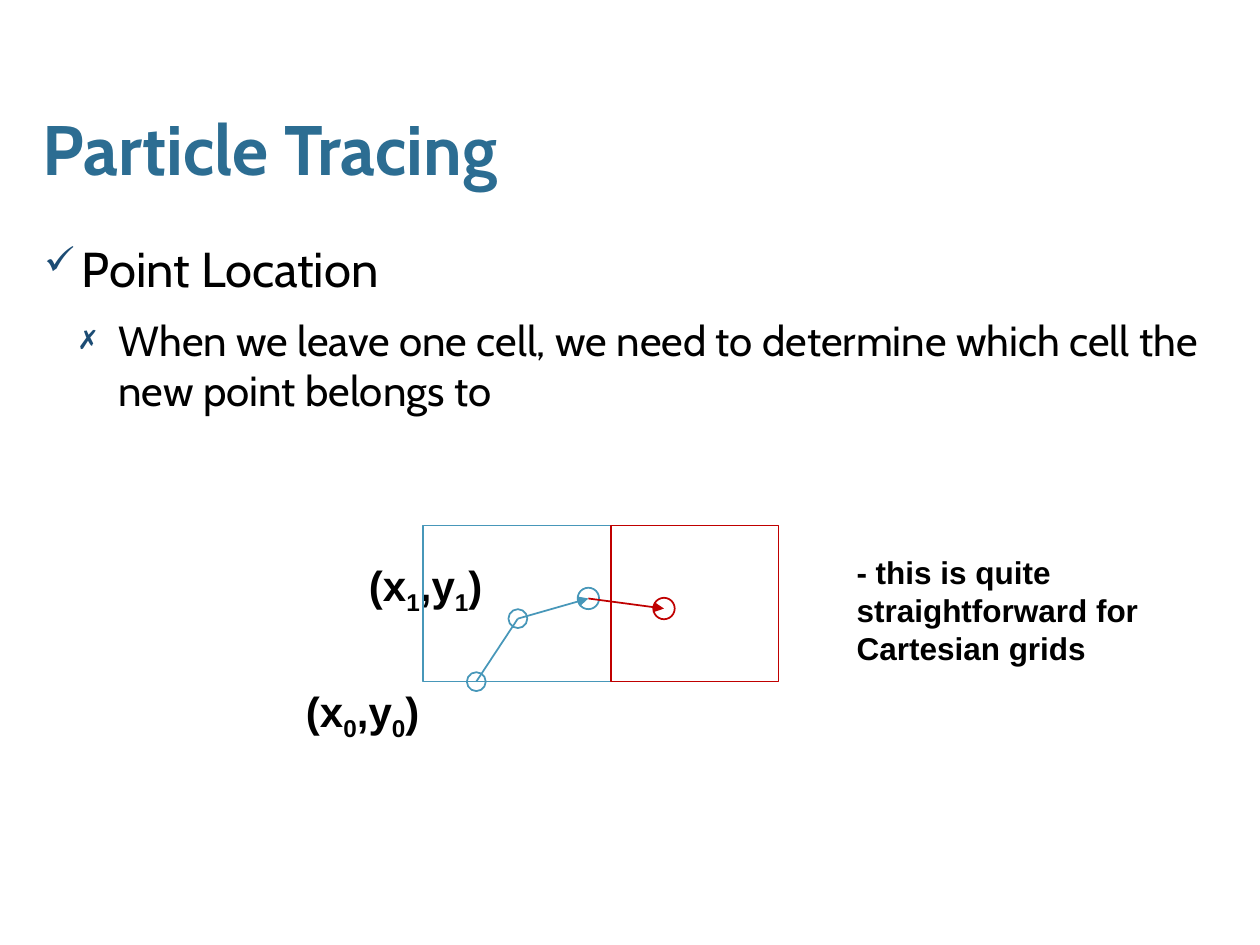
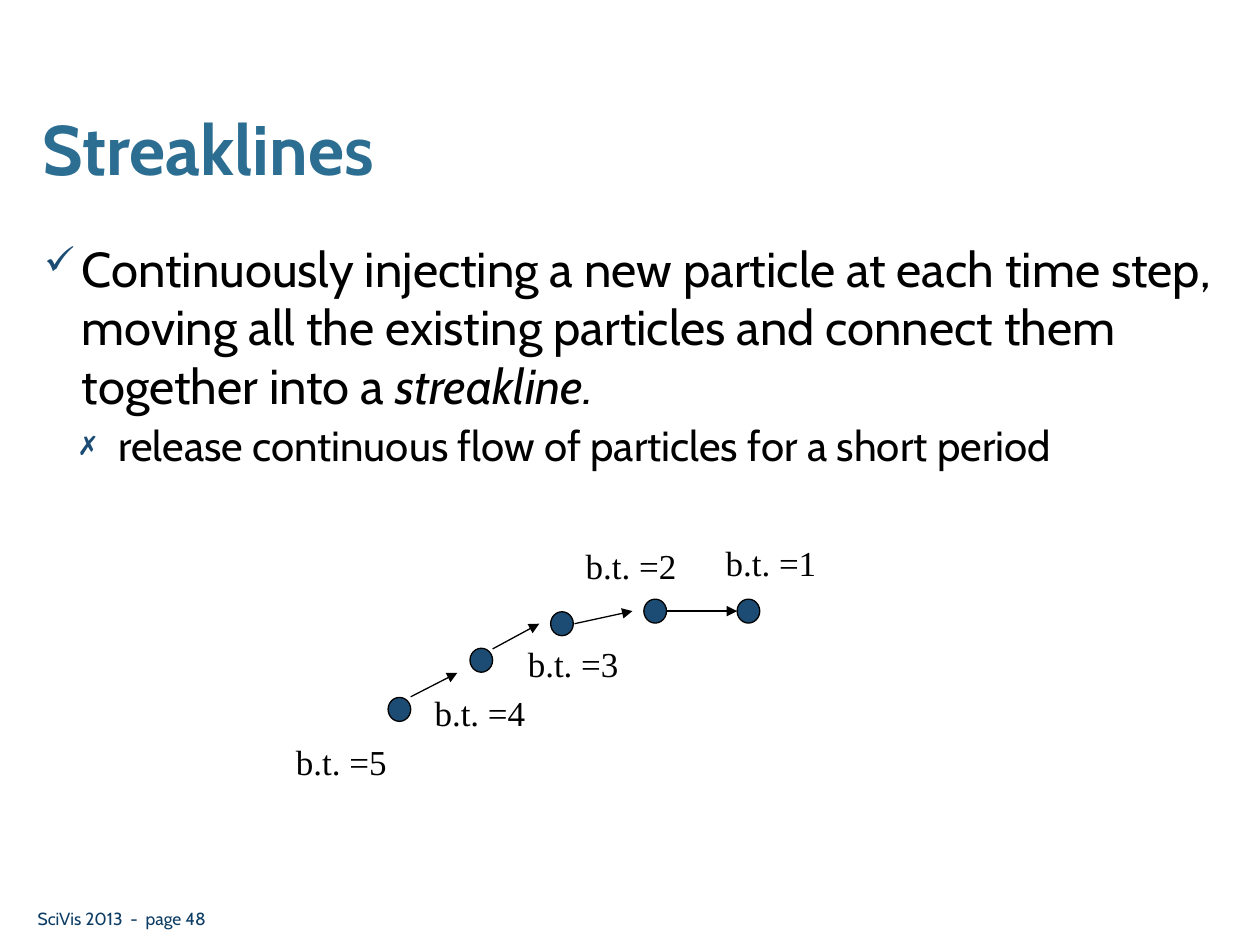
from itertools import pairwise

from lxml import etree
from pptx import Presentation
from pptx import util as u
from pptx.dml.color import RGBColor
from pptx.enum import shapes, text
from pptx.oxml import ns

TITLE_BLUE = RGBColor(0x2C, 0x6D, 0x92)
NAVY = RGBColor(0x1C, 0x4C, 0x74)
FOOTER_BLUE = RGBColor(0x0D, 0x3D, 0x65)
CELL_BLUE = RGBColor(0x47, 0x97, 0xB9)
CELL_RED = RGBColor(0xC0, 0x00, 0x00)
BLACK = RGBColor(0x00, 0x00, 0x00)
TITLE_ONLY = 5


def inches(*lengths):
    return [u.Inches(length) for length in lengths]


def add_xml(parent, tag, **attributes):
    return etree.SubElement(parent, ns.qn(tag), attributes)


class Deck:
    font = "Cabin"
    bullets = [("✓", 0.3, 28), ("✗", 0.59, 24)]
    hanging = 0.3

    def __init__(self):
        self.presentation = Presentation()
        self.presentation.slide_width, self.presentation.slide_height = inches(10, 7.5)
        self.slide = None

    def add_slide(self, title):
        layout = self.presentation.slide_layouts[TITLE_ONLY]
        self.slide = self.presentation.slides.add_slide(layout)
        shape = self.slide.shapes.title
        shape.left, shape.top, shape.width, shape.height = inches(0.34, 0.84, 9.31, 0.73)
        frame = self.format_frame(shape, side_inset=0)
        frame.vertical_anchor = text.MSO_ANCHOR.MIDDLE
        paragraph = frame.paragraphs[0]
        paragraph.alignment = text.PP_ALIGN.LEFT
        paragraph.line_spacing = 0.95
        self.add_run(paragraph, title, 40, TITLE_BLUE, bold=True)

    def format_frame(self, shape, side_inset=0.1, wrap=True):
        frame = shape.text_frame
        frame.word_wrap = wrap
        frame.auto_size = text.MSO_AUTO_SIZE.NONE
        frame.margin_left = frame.margin_right = u.Inches(side_inset)
        frame.margin_top = frame.margin_bottom = u.Inches(0.05)
        return frame

    def add_run(self, paragraph, words, size, color=BLACK, font=None,
                bold=False, italic=False, subscript=False):
        run = paragraph.add_run()
        run.text = words
        run.font.name = font or self.font
        run.font.size = u.Pt(size)
        run.font.bold = bold
        run.font.italic = italic
        run.font.color.rgb = color
        if subscript:
            run.font._element.set("baseline", "-25000")

    def add_text_box(self, box, wrap=True, side_inset=0.1):
        shape = self.slide.shapes.add_textbox(*inches(*box))
        return self.format_frame(shape, side_inset, wrap)

    def add_label(self, box, words, size, wrap=True, **style):
        frame = self.add_text_box(box, wrap)
        self.add_run(frame.paragraphs[0], words, size, **style)

    def add_point_label(self, left, top, index):
        paragraph = self.add_text_box((left, top, 1.18, 0.5), wrap=False).paragraphs[0]
        for words in ("(x", index, ",y", index, ")"):
            self.add_run(paragraph, words, 24, font="Arial", bold=True,
                         subscript=words == index)

    def add_bullets(self, items, gap=3):
        frame = self.add_text_box((0.35, 1.84, 9.32, 4.95), side_inset=0)
        for level, runs in enumerate(items):
            paragraph = frame.add_paragraph() if level else frame.paragraphs[0]
            mark, indent, size = self.bullets[level]
            properties = paragraph._p.get_or_add_pPr()
            properties.set("marL", str(u.Inches(indent)))
            properties.set("indent", str(-u.Inches(self.hanging)))
            color = add_xml(properties, "a:buClr")
            add_xml(color, "a:srgbClr", val=str(NAVY))
            add_xml(properties, "a:buSzPct", val="80000")
            add_xml(properties, "a:buChar", char=mark)
            paragraph.level = level
            paragraph.space_before = u.Pt(gap if level else 0)
            for words, italic in runs:
                self.add_run(paragraph, words, size, italic=italic)

    def add_outline(self, kind, box, line, weight=1, fill=None):
        shape = self.slide.shapes.add_shape(kind, *inches(*box))
        shape.shadow.inherit = False
        if fill is None:
            shape.fill.background()
        else:
            shape.fill.solid()
            shape.fill.fore_color.rgb = fill
        shape.line.color.rgb = line
        shape.line.width = u.Pt(weight)

    def add_cell(self, box, color):
        self.add_outline(shapes.MSO_SHAPE.RECTANGLE, box, color)

    def add_particle(self, center, width, height, line, weight=1, fill=None):
        x, y = center
        box = (x - width / 2, y - height / 2, width, height)
        self.add_outline(shapes.MSO_SHAPE.OVAL, box, line, weight, fill)

    def add_line(self, start, end, color, weight=1, arrow=True):
        connector = self.slide.shapes.add_connector(
            shapes.MSO_CONNECTOR.STRAIGHT, *inches(*start, *end))
        connector.line.color.rgb = color
        connector.line.width = u.Pt(weight)
        if arrow:
            add_xml(connector.line._get_or_add_ln(), "a:tailEnd", type="triangle")
        add_xml(connector._element.spPr, "a:effectLst")

    def add_footer(self, words):
        self.add_label((0.2, 7.16, 3.02, 0.27), words, 10, color=FOOTER_BLUE)


def build_particle_tracing(deck):
    deck.add_slide("Particle Tracing")
    deck.add_bullets([
        [("Point Location", False)],
        [("When we leave one cell, we need to determine which cell "
          "the new point belongs to", False)],
    ], gap=10)
    deck.add_point_label(2.33, 5.39, "0")
    deck.add_point_label(2.83, 4.39, "1")

    cell_top, cell_height, shared_edge = 4.17, 1.24, 4.85
    deck.add_cell((3.36, cell_top, shared_edge - 3.36, cell_height), CELL_BLUE)
    deck.add_cell((shared_edge, cell_top, 1.33, cell_height), CELL_RED)

    trace = [(3.78, 5.41), (4.11, 4.91), (4.67, 4.75), (5.27, 4.83)]
    diameters = [0.15, 0.15, 0.17, 0.17]
    colors = [CELL_BLUE, CELL_BLUE, CELL_BLUE, CELL_RED]
    for center, diameter, color in zip(trace, diameters, colors):
        deck.add_particle(center, diameter, diameter, color)
    for step, (start, end) in enumerate(pairwise(trace)):
        deck.add_line(start, end, colors[step + 1], arrow=step > 0)

    deck.add_label((6.7, 4.34, 3.06, 1.01),
                   "- this is quite straightforward for Cartesian grids",
                   18, font="Arial", bold=True)


def build_streaklines(deck):
    deck.add_slide("Streaklines")
    deck.add_bullets([
        [("Continuously injecting a new particle at each time step, moving all "
          "the existing particles and connect them together into a ", False),
         ("streakline.", True)],
        [("release continuous flow of particles for a short period", False)],
    ])
    deck.add_footer("SciVis 2013  -  page 48")

    particles = [(3.17, 5.63), (3.82, 5.24), (4.46, 4.95), (5.2, 4.85), (5.94, 4.85)]
    for center in particles:
        deck.add_particle(center, 0.18, 0.19, BLACK, 0.75, NAVY)

    arrows = [((3.26, 5.53), (3.63, 5.34)), ((3.91, 5.15), (4.28, 4.95)),
              ((4.56, 4.95), (5.02, 4.85)), ((5.29, 4.85), (5.85, 4.85))]
    for start, end in arrows:
        deck.add_line(start, end, BLACK, 0.75)

    label_corners = [(5.66, 4.25), (4.55, 4.27), (4.09, 5.05), (3.35, 5.44), (2.25, 5.83)]
    for birth_time, corner in enumerate(label_corners, start=1):
        deck.add_label((*corner, 1.02, 0.51), f"b.t. ={birth_time}", 20,
                       wrap=False, font="Times New Roman")


def main():
    deck = Deck()
    build_particle_tracing(deck)
    build_streaklines(deck)
    deck.presentation.save("out.pptx")


if __name__ == "__main__":
    main()
